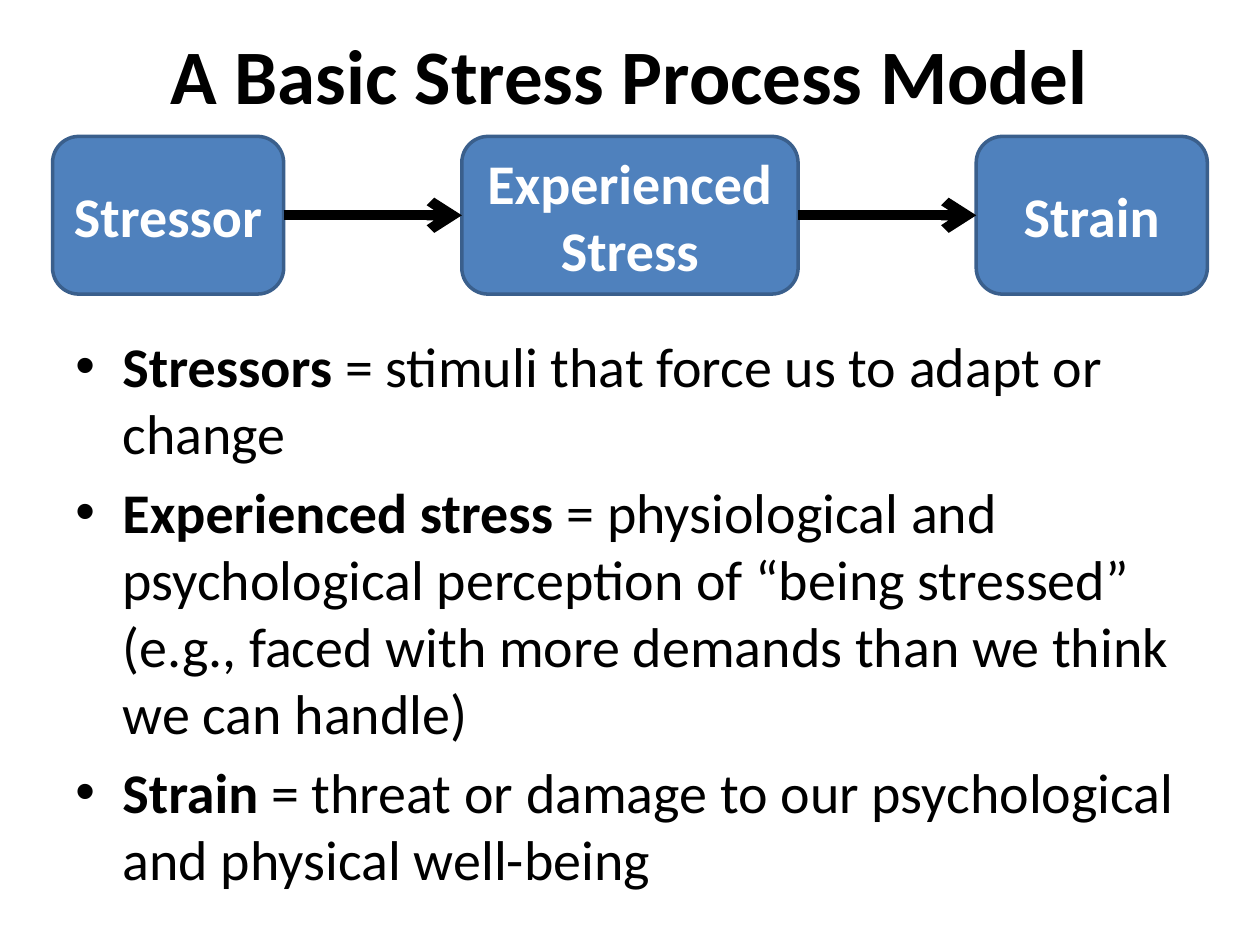
from dataclasses import dataclass

from lxml import etree
from pptx import Presentation
from pptx.dml.color import RGBColor
from pptx.enum.shapes import MSO_CONNECTOR, MSO_SHAPE
from pptx.enum.text import MSO_ANCHOR, PP_ALIGN
from pptx.oxml.ns import qn
from pptx.util import Cm, Pt

STRAIGHT = MSO_CONNECTOR.STRAIGHT
ROUNDED = MSO_SHAPE.ROUNDED_RECTANGLE
MIDDLE, TOP = MSO_ANCHOR.MIDDLE, MSO_ANCHOR.TOP
CENTER, LEFT = PP_ALIGN.CENTER, PP_ALIGN.LEFT
TITLE_ONLY = 5
LEFT_SIDE, RIGHT_SIDE = 1, 3


@dataclass(frozen=True)
class Theme:
    font: str = "Calibri"
    title_size: float = 44
    text_size: float = 32
    outline_width: float = 2
    arrow_width: float = 5.75
    text: RGBColor = RGBColor(0x00, 0x00, 0x00)
    box_text: RGBColor = RGBColor(0xFF, 0xFF, 0xFF)
    box_fill: RGBColor = RGBColor(0x4F, 0x81, 0xBD)
    box_outline: RGBColor = RGBColor(0x3A, 0x5F, 0x8C)


class SlideBuilder:
    def __init__(self, slide, theme):
        self.slide = slide
        self.theme = theme

    def format_paragraph(self, paragraph, size, color, alignment, bold=None):
        paragraph.alignment = alignment
        font = paragraph.font
        font.name = self.theme.font
        font.size = Pt(size)
        font.color.rgb = color
        font.bold = bold

    def title(self, text, left, top, width, height):
        shape = self.slide.shapes.title
        shape.left, shape.top, shape.width, shape.height = map(Cm, (left, top, width, height))
        frame = shape.text_frame
        frame.text = text
        frame.vertical_anchor = MIDDLE
        self.format_paragraph(frame.paragraphs[0], self.theme.title_size, self.theme.text, CENTER, True)

    def box(self, lines, left, top, width, height):
        shape = self.slide.shapes.add_shape(ROUNDED, Cm(left), Cm(top), Cm(width), Cm(height))
        shape.shadow.inherit = False
        shape.fill.solid()
        shape.fill.fore_color.rgb = self.theme.box_fill
        shape.line.color.rgb = self.theme.box_outline
        shape.line.width = Pt(self.theme.outline_width)
        frame = shape.text_frame
        frame.word_wrap = True
        frame.vertical_anchor = MIDDLE
        frame.text = "\n".join(lines)
        for paragraph in frame.paragraphs:
            self.format_paragraph(paragraph, self.theme.text_size, self.theme.box_text, CENTER, True)
        return shape

    def arrow(self, source, target):
        connector = self.slide.shapes.add_connector(STRAIGHT, 0, 0, 0, 0)
        connector.begin_connect(source, RIGHT_SIDE)
        connector.end_connect(target, LEFT_SIDE)
        connector.line.color.rgb = self.theme.text
        connector.line.width = Pt(self.theme.arrow_width)
        properties = connector.element.spPr
        etree.SubElement(properties.find(qn("a:ln")), qn("a:tailEnd"), type="arrow")
        etree.SubElement(properties, qn("a:effectLst"))

    def definitions(self, entries, left, top, width, height):
        shape = self.slide.shapes.add_textbox(Cm(left), Cm(top), Cm(width), Cm(height))
        frame = shape.text_frame
        frame.word_wrap = True
        frame.vertical_anchor = TOP
        for index, (term, meaning) in enumerate(entries):
            paragraph = frame.paragraphs[0] if index == 0 else frame.add_paragraph()
            self.format_paragraph(paragraph, self.theme.text_size, self.theme.text, LEFT)
            paragraph.space_before = Pt(self.theme.text_size * 0.2)
            self.bullet(paragraph)
            term_run = paragraph.add_run()
            term_run.text = term
            term_run.font.bold = True
            paragraph.add_run().text = f" = {meaning}"

    def bullet(self, paragraph):
        properties = paragraph._p.get_or_add_pPr()
        indent = Cm(0.95)
        properties.set("marL", str(indent))
        properties.set("indent", str(-indent))
        bullet_font = etree.Element(qn("a:buFont"), typeface="Arial")
        bullet_character = etree.Element(qn("a:buChar"), char="•")
        defaults = properties.find(qn("a:defRPr"))
        defaults.addprevious(bullet_font)
        defaults.addprevious(bullet_character)


def main():
    presentation = Presentation()
    presentation.slide_width = Cm(25.4)
    presentation.slide_height = Cm(19.05)
    slide = presentation.slides.add_slide(presentation.slide_layouts[TITLE_ONLY])
    builder = SlideBuilder(slide, Theme())

    builder.title("A Basic Stress Process Model", 1.27, 0.42, 22.86, 2.12)
    builder.definitions(
        [
            ("Stressors", "stimuli that force us to adapt or change"),
            (
                "Experienced stress",
                "physiological and psychological perception of “being stressed” "
                "(e.g., faced with more demands than we think we can handle)",
            ),
            ("Strain", "threat or damage to our psychological and physical well-being"),
        ],
        1.27, 6.56, 22.86, 12.06,
    )

    stages = [
        (["Stressor"], 4.66),
        (["Experienced", "Stress"], 6.78),
        (["Strain"], 4.66),
    ]
    left, gap = 1.06, 3.59
    boxes = []
    for lines, width in stages:
        boxes.append(builder.box(lines, left, 2.75, width, 3.18))
        left += width + gap
    for source, target in zip(boxes, boxes[1:]):
        builder.arrow(source, target)

    presentation.save("out.pptx")


if __name__ == "__main__":
    main()
